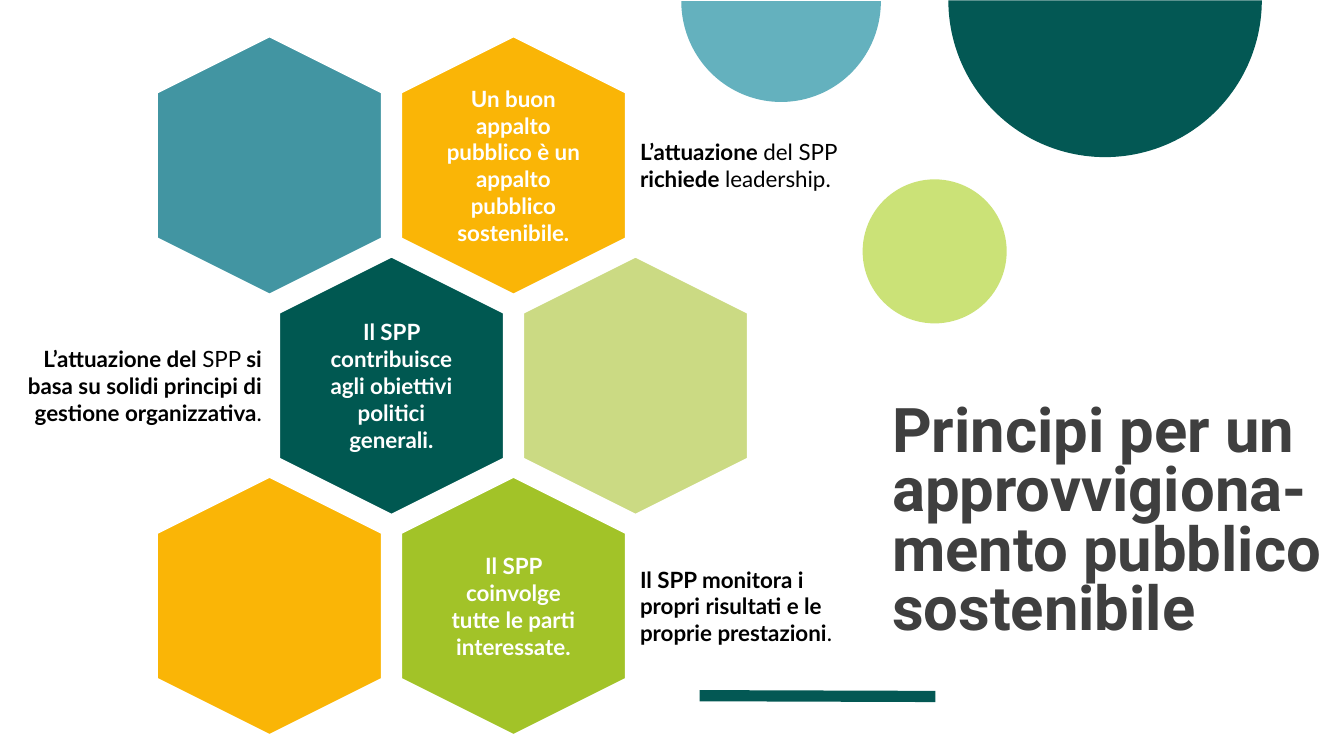
from pptx import Presentation
from pptx.dml.color import RGBColor as Rgb
from pptx.enum.shapes import MSO_CONNECTOR as Connector, MSO_SHAPE as Shape
from pptx.enum.text import MSO_ANCHOR as Anchor, MSO_AUTO_SIZE as AutoSize, PP_ALIGN as Align
from pptx.oxml.ns import qn
from pptx.util import Cm, Pt


class Theme:
    white, black, charcoal = Rgb(255, 255, 255), Rgb(0, 0, 0), Rgb(0x3F, 0x3F, 0x3F)
    pine, forest = Rgb(0x03, 0x58, 0x54), Rgb(0x00, 0x58, 0x51)
    teal, aqua = Rgb(0x42, 0x95, 0xA2), Rgb(0x64, 0xB1, 0xBE)
    lime, sage, leaf = Rgb(0xCB, 0xE2, 0x77), Rgb(0xCB, 0xDA, 0x83), Rgb(0xA2, 0xC3, 0x28)
    amber = Rgb(0xFA, 0xB5, 0x06)
    title_font, body_font = "Roboto", "Lato"
    title_size, body_size = Pt(44), Pt(16)


def add_figure(kind, left, top, width, height, color):
    figure = slide.shapes.add_shape(kind, Cm(left), Cm(top), Cm(width), Cm(height))
    figure.shadow.inherit = False
    figure.fill.solid()
    figure.fill.fore_color.rgb = color
    figure.line.fill.background()
    return figure


def add_text(left, center_y, width, height, align, color, runs):
    box = slide.shapes.add_textbox(Cm(left), Cm(center_y - height / 2), Cm(width), Cm(height))
    frame = box.text_frame
    frame.word_wrap = True
    frame.vertical_anchor = Anchor.MIDDLE
    frame.margin_left = frame.margin_right = frame.margin_top = frame.margin_bottom = Cm(0.18)
    paragraph = frame.paragraphs[0]
    paragraph.alignment = align
    for text, bold in runs:
        run = paragraph.add_run()
        run.text = text
        run.font.name, run.font.size = Theme.body_font, Theme.body_size
        run.font.bold = bold
        run.font.color.rgb = color


deck = Presentation()
deck.slide_width, deck.slide_height = Cm(33.87), Cm(19.05)
slide = deck.slides.add_slide(deck.slide_layouts[5])

# Decoration: bottom rule, half discs at the top edge, disc
rule = slide.shapes.add_connector(Connector.STRAIGHT, Cm(17.63), Cm(17.53), Cm(23.57), Cm(17.55))
rule.line.color.rgb = Theme.pine
rule.line.width = Pt(8)
rule._element.spPr.append(rule._element.makeelement(qn("a:effectLst"), {}))

for left, top, width, height, color in [
    (23.9, -3.94, 7.9, 7.9, Theme.pine),
    (17.17, -2.51, 5.03, 5.08, Theme.aqua),
]:
    half_disc = add_figure(Shape.PIE, left, top, width, height, color)
    half_disc.adjustments[0] = 0
    half_disc.adjustments[1] = 108  # 180 degrees
add_figure(Shape.OVAL, 21.74, 4.52, 3.63, 3.63, Theme.lime)

# Title
title = slide.shapes.title
title.left, title.top, title.width, title.height = Cm(22.48), Cm(8.36), Cm(11.4), Cm(7.82)
heading = title.text_frame
heading.auto_size = AutoSize.NONE
heading.word_wrap = True
heading.vertical_anchor = Anchor.BOTTOM
heading.margin_left = heading.margin_right = heading.margin_top = heading.margin_bottom = 0
heading_line = heading.paragraphs[0]
heading_line.alignment = Align.LEFT
heading_line.line_spacing = 0.8
heading_run = heading_line.add_run()
heading_run.text = "Principi per un approvvigiona-mento pubblico sostenibile"
heading_run.font.name, heading_run.font.size = Theme.title_font, Theme.title_size
heading_run.font.bold = True
heading_run.font.color.rgb = Theme.charcoal

# Honeycomb: the middle row is shifted by half a column
first_x, column_step = 6.79, 6.15
row_centers = [4.17 + 5.55 * row for row in range(3)]
hexagon_length, hexagon_breadth = 6.53, 5.69
principles = [
    (0, 0, Theme.teal, ""),
    (0, 1, Theme.amber, "Un buon appalto pubblico è un appalto pubblico sostenibile."),
    (1, 0.5, Theme.forest, "Il SPP contribuisce agli obiettivi politici generali."),
    (1, 1.5, Theme.sage, ""),
    (2, 0, Theme.amber, ""),
    (2, 1, Theme.leaf, "Il SPP coinvolge tutte le parti interessate."),
]
for row, column, color, principle in principles:
    center_x, center_y = first_x + column * column_step, row_centers[row]
    hexagon = add_figure(Shape.HEXAGON, center_x - hexagon_length / 2,
                         center_y - hexagon_breadth / 2, hexagon_length, hexagon_breadth, color)
    hexagon.rotation = 90
    hexagon.line.color.rgb = Theme.white
    hexagon.line.width = Pt(2)
    if principle:
        add_text(center_x - 1.96, center_y, 3.92, 4.5, Align.CENTER, Theme.white,
                 [(principle, True)])

# Notes beside the honeycomb, as (text, bold) runs
notes = [
    (15.95, 7.29, Align.LEFT, [("L’attuazione ", True), ("del SPP ", False),
                               ("richiede ", True), ("leadership.", False)]),
    (-0.28, 7.06, Align.RIGHT, [("L’attuazione del ", True), ("SPP ", False),
                                ("si basa su solidi principi di gestione organizzativa", True),
                                (".", False)]),
    (15.95, 6.07, Align.LEFT, [("Il SPP monitora i propri risultati e le proprie prestazioni", True),
                               (".", False)]),
]
for center_y, (left, width, align, runs) in zip(row_centers, notes):
    add_text(left, center_y, width, 3.91, align, Theme.black, runs)

deck.save("out.pptx")
